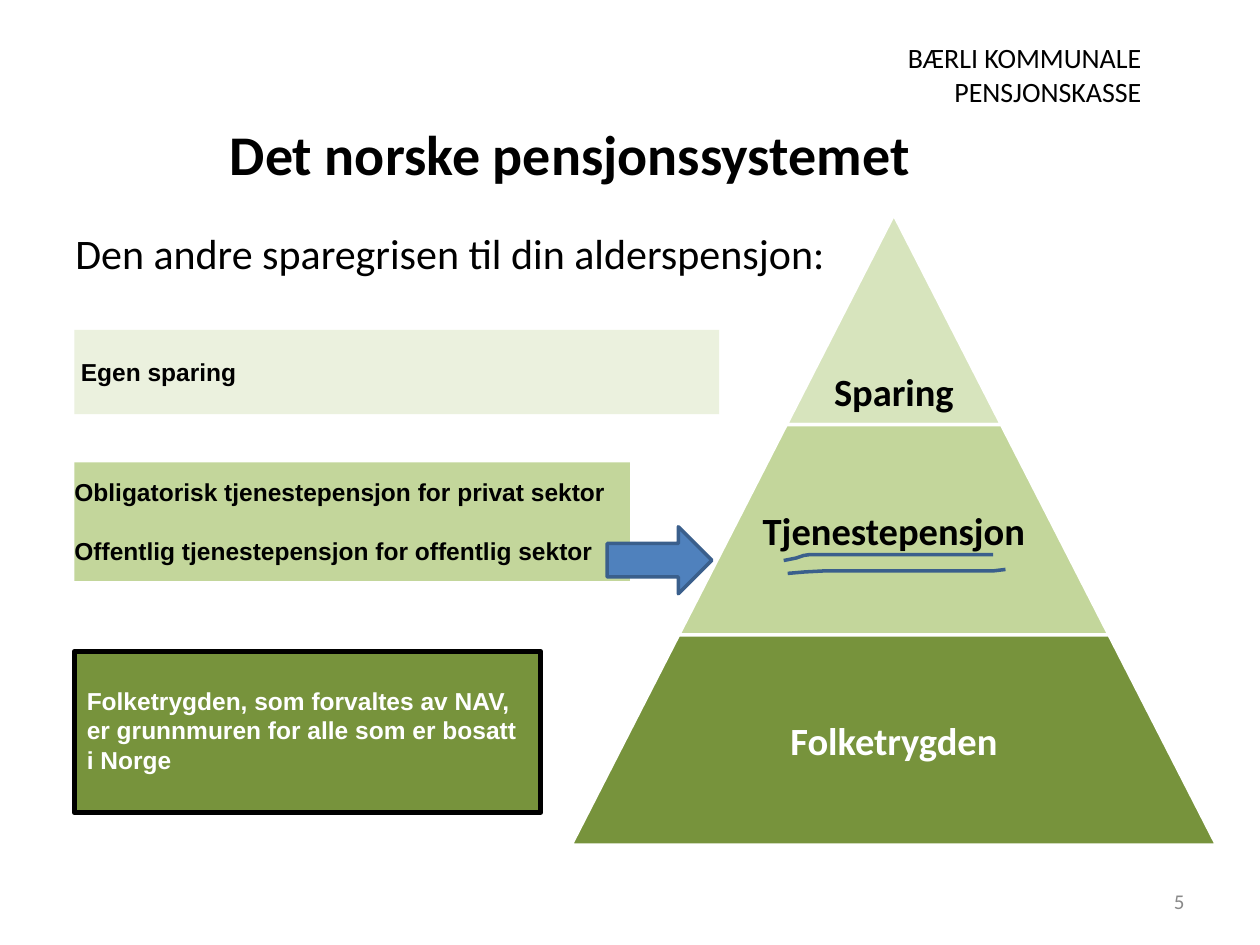
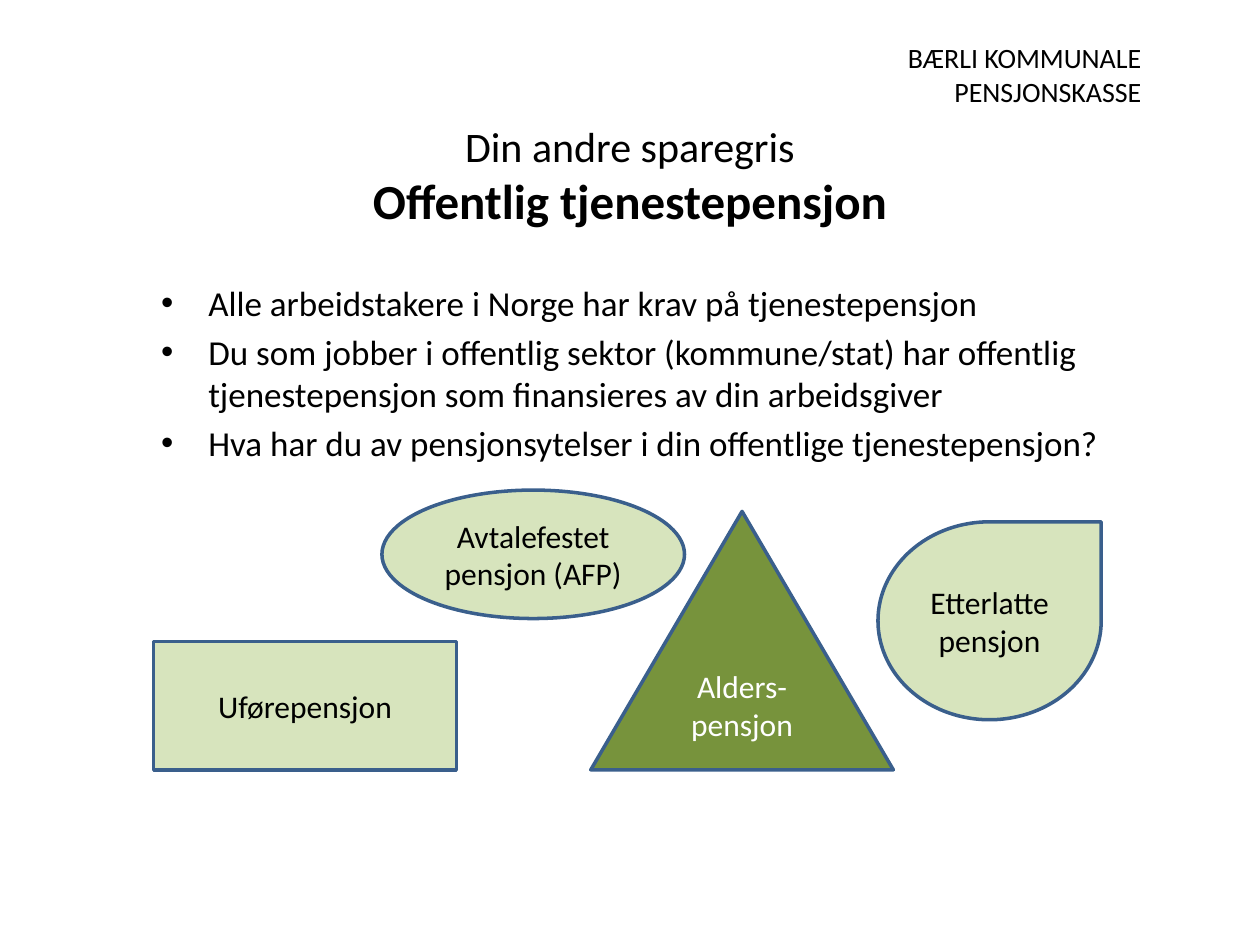
from dataclasses import dataclass

from lxml.etree import SubElement
from pptx import Presentation
from pptx.dml.color import RGBColor
from pptx.enum.shapes import MSO_SHAPE
from pptx.enum.text import MSO_ANCHOR, MSO_AUTO_SIZE, PP_ALIGN
from pptx.oxml.ns import qn
from pptx.util import Cm, Pt


@dataclass(frozen=True)
class Theme:
    """Colours, fonts and type sizes shared by the slides."""
    black: str = "000000"
    white: str = "FFFFFF"
    grey: str = "898989"
    dark_green: str = "77933C"
    green: str = "C3D69B"
    light_green: str = "D7E4BD"
    pale_green: str = "EBF1DE"
    blue: str = "4F81BD"
    dark_blue: str = "3A5F8C"
    font: str = "Calibri"
    box_font: str = "Arial"
    title: int = 32
    subtitle: int = 28
    lead: int = 24
    tier: int = 22
    bullet: int = 20
    shape: int = 18
    header: int = 16
    box: int = 14
    number: int = 12


T = Theme()


def cm(*values):
    """Turn centimetre numbers into lengths."""
    return [Cm(v) for v in values]


def add_bullet(p):
    """Give a paragraph a round bullet with a hanging indent."""
    pPr = p._p.get_or_add_pPr()
    pPr.set("marL", str(Cm(0.95)))
    pPr.set("indent", str(-Cm(0.95)))
    SubElement(pPr, qn("a:buFont"), typeface="Arial")
    SubElement(pPr, qn("a:buChar"), char="•")


def write(tf, *texts, size, color=T.black, font=T.font, bold=False,
          align=PP_ALIGN.LEFT, gap=0, bullet=False):
    """Append one formatted paragraph per text to a text frame."""
    for text in texts:
        p = tf.paragraphs[0] if not tf.text else tf.add_paragraph()
        if bullet:
            add_bullet(p)
        p.text = text
        p.alignment = align
        if p._p is not tf.paragraphs[0]._p:
            p.space_before = Pt(gap)
        for r in p.runs:
            r.font.size, r.font.name, r.font.bold = Pt(size), font, bold
            r.font.color.rgb = RGBColor.from_string(color)


def set_frame(tf, anchor=MSO_ANCHOR.TOP, insets=(0.25, 0.13, 0.25, 0.13)):
    """Set wrapping, anchor and insets of a text frame and return it."""
    tf.word_wrap = True
    tf.auto_size = MSO_AUTO_SIZE.NONE
    tf.vertical_anchor = anchor
    tf.margin_left, tf.margin_top, tf.margin_right, tf.margin_bottom = cm(*insets)
    return tf


def add_text(s, at, **frame):
    """Add a text box and return its text frame."""
    return set_frame(s.shapes.add_textbox(*cm(*at)).text_frame, **frame)


def set_line(sp, color, width):
    """Give a shape an outline, or none without a colour."""
    if color:
        sp.line.color.rgb = RGBColor.from_string(color)
        sp.line.width = Pt(width)
    else:
        sp.line.fill.background()


def add_shape(s, kind, at, fill, line=None, width=2):
    """Add a flat preset shape and return it."""
    sp = s.shapes.add_shape(kind, *cm(*at))
    sp.shadow.inherit = False
    sp.fill.solid()
    sp.fill.fore_color.rgb = RGBColor.from_string(fill)
    set_line(sp, line, width)
    return sp


def add_box(s, at, fill, *texts, color=T.black, line=None, gap=0, **frame):
    """Add a rectangle that explains one tier of the pyramid."""
    sp = add_shape(s, MSO_SHAPE.RECTANGLE, at, fill, line, 3)
    write(set_frame(sp.text_frame, **frame), *texts, size=T.box, color=color,
          font=T.box_font, bold=True, gap=gap)


def add_stroke(s, points):
    """Draw an open line through the points."""
    (x, y), *rest = [cm(*point) for point in points]
    builder = s.shapes.build_freeform(x, y)
    builder.add_line_segments(rest, close=False)
    sp = builder.convert_to_shape()
    sp.shadow.inherit = False
    sp.fill.background()
    set_line(sp, T.dark_blue, 2)


def add_pyramid(s, tiers, center=18.02, top=4.32, step=4.34, height=4.24):
    """Stack trapezoids that widen by one step per tier."""
    for i, (text, fill, color, anchor) in enumerate(tiers):
        width, y = step * (i + 1), top + height * i
        sp = add_shape(s, MSO_SHAPE.TRAPEZOID, (center - width / 2, y, width, height),
                       fill, T.white)
        sp.adjustments[0] = step / 2 / height
        label = max(step, width * 0.65)
        tf = add_text(s, (center - label / 2, y, label, height), anchor=anchor,
                      insets=(0.08, 0.08, 0.08, 0.2 if anchor == MSO_ANCHOR.BOTTOM else 0.08))
        write(tf, text, size=T.tier, color=color, bold=True, align=PP_ALIGN.CENTER)


def add_header(s):
    """Add the name of the pension fund at the top right."""
    table = s.shapes.add_table(2, 1, *cm(17.53, 0.84, 5.61, 1.38)).table
    table.first_row = table.horz_banding = False
    for row, text in zip(table.rows, ("BÆRLI KOMMUNALE", "PENSJONSKASSE")):
        row.height = Cm(0.69)
        cell = row.cells[0]
        cell.fill.background()
        cell.margin_left = cell.margin_right = Cm(0.13)
        cell.margin_top = cell.margin_bottom = 0
        write(cell.text_frame, text, size=T.header, align=PP_ALIGN.RIGHT)


def add_slide(prs, title_at, insets=(0.25, 0.13, 0.25, 0.13)):
    """Add a slide with the header and return it with its title frame."""
    s = prs.slides.add_slide(prs.slide_layouts[5])
    sp = s.shapes.title
    sp.left, sp.top, sp.width, sp.height = cm(*title_at)
    add_header(s)
    return s, set_frame(sp.text_frame, MSO_ANCHOR.MIDDLE, insets)


def build_system(prs):
    """Build the slide on the three tiers of the pension system."""
    s, tf = add_slide(prs, (1.24, 0.99, 20.5, 2.79), (0.25, 1.52, 0.25, 0.13))
    write(tf, "Det norske pensjonssystemet", size=T.title, bold=True,
          align=PP_ALIGN.CENTER)
    write(add_text(s, (1.27, 4.45, 22.86, 12.57)),
          "Den andre sparegrisen til din alderspensjon:", size=T.lead)
    write(add_text(s, (18.21, 17.65, 5.92, 1.02), anchor=MSO_ANCHOR.MIDDLE),
          "5", size=T.number, color=T.grey, align=PP_ALIGN.RIGHT)

    add_box(s, (1.5, 13.13, 9.4, 3.25), T.dark_green,
            "Folketrygden, som forvaltes av NAV, er grunnmuren for alle som er bosatt i Norge",
            color=T.white, line=T.black, insets=(0.25, 0.7, 0.25, 0.13))
    add_box(s, (1.5, 9.32, 11.2, 2.39), T.green,
            "Obligatorisk tjenestepensjon for privat sektor",
            "Offentlig tjenestepensjon for offentlig sektor",
            gap=17, anchor=MSO_ANCHOR.MIDDLE, insets=(0, 0, 0, 0))
    add_box(s, (1.5, 6.65, 13, 1.7), T.pale_green, "Egen sparing",
            anchor=MSO_ANCHOR.MIDDLE, insets=(0.13, 0, 0, 0))

    add_pyramid(s, [
        ("Sparing", T.light_green, T.black, MSO_ANCHOR.BOTTOM),
        ("Tjenestepensjon", T.green, T.black, MSO_ANCHOR.MIDDLE),
        ("Folketrygden", T.dark_green, T.white, MSO_ANCHOR.MIDDLE),
    ])
    add_shape(s, MSO_SHAPE.RIGHT_ARROW, (12.24, 10.62, 2.11, 1.35), T.blue, T.dark_blue)
    add_stroke(s, [(15.8, 11.3), (16.05, 11.25), (16.2, 11.2), (16.33, 11.18),
                   (20.02, 11.18)])
    add_stroke(s, [(15.88, 11.56), (16.23, 11.53), (16.61, 11.51), (20.02, 11.51),
                   (20.27, 11.48)])


def build_occupational(prs):
    """Build the slide on public occupational pension and its benefits."""
    s, tf = add_slide(prs, (1.27, 1.93, 22.86, 3.18))
    write(tf, "Din andre sparegris", size=T.lead, align=PP_ALIGN.CENTER)
    write(tf, "Offentlig tjenestepensjon", size=T.subtitle, bold=True,
          align=PP_ALIGN.CENTER)
    write(add_text(s, (3, 5.54, 21.59, 11)),
          "Alle arbeidstakere i Norge har krav på tjenestepensjon",
          "Du som jobber i offentlig sektor (kommune/stat) har offentlig "
          "tjenestepensjon som finansieres av din arbeidsgiver",
          "Hva har du av pensjonsytelser i din offentlige tjenestepensjon?",
          size=T.bullet, gap=4, bullet=True)

    benefits = [
        ("Avtalefestet pensjon (AFP)", MSO_SHAPE.OVAL, (7.7, 9.88, 6.1, 2.59),
         T.light_green, T.black),
        ("Alders-pensjon", MSO_SHAPE.ISOSCELES_TRIANGLE, (11.91, 10.31, 6.1, 5.21),
         T.dark_green, T.white),
        ("Uførepensjon", MSO_SHAPE.RECTANGLE, (3.1, 12.93, 6.1, 2.59),
         T.light_green, T.black),
        ("Etterlatte\vpensjon", MSO_SHAPE.TEAR, (17.7, 10.52, 4.5, 3.99),
         T.light_green, T.black),
    ]
    for text, kind, at, fill, color in benefits:
        sp = add_shape(s, kind, at, fill, T.dark_blue)
        write(set_frame(sp.text_frame, MSO_ANCHOR.MIDDLE), text, size=T.shape,
              color=color, align=PP_ALIGN.CENTER)


def main():
    """Build both slides and save the presentation."""
    prs = Presentation()
    prs.slide_width, prs.slide_height = cm(25.4, 19.05)
    build_system(prs)
    build_occupational(prs)
    prs.save("out.pptx")


if __name__ == "__main__":
    main()
